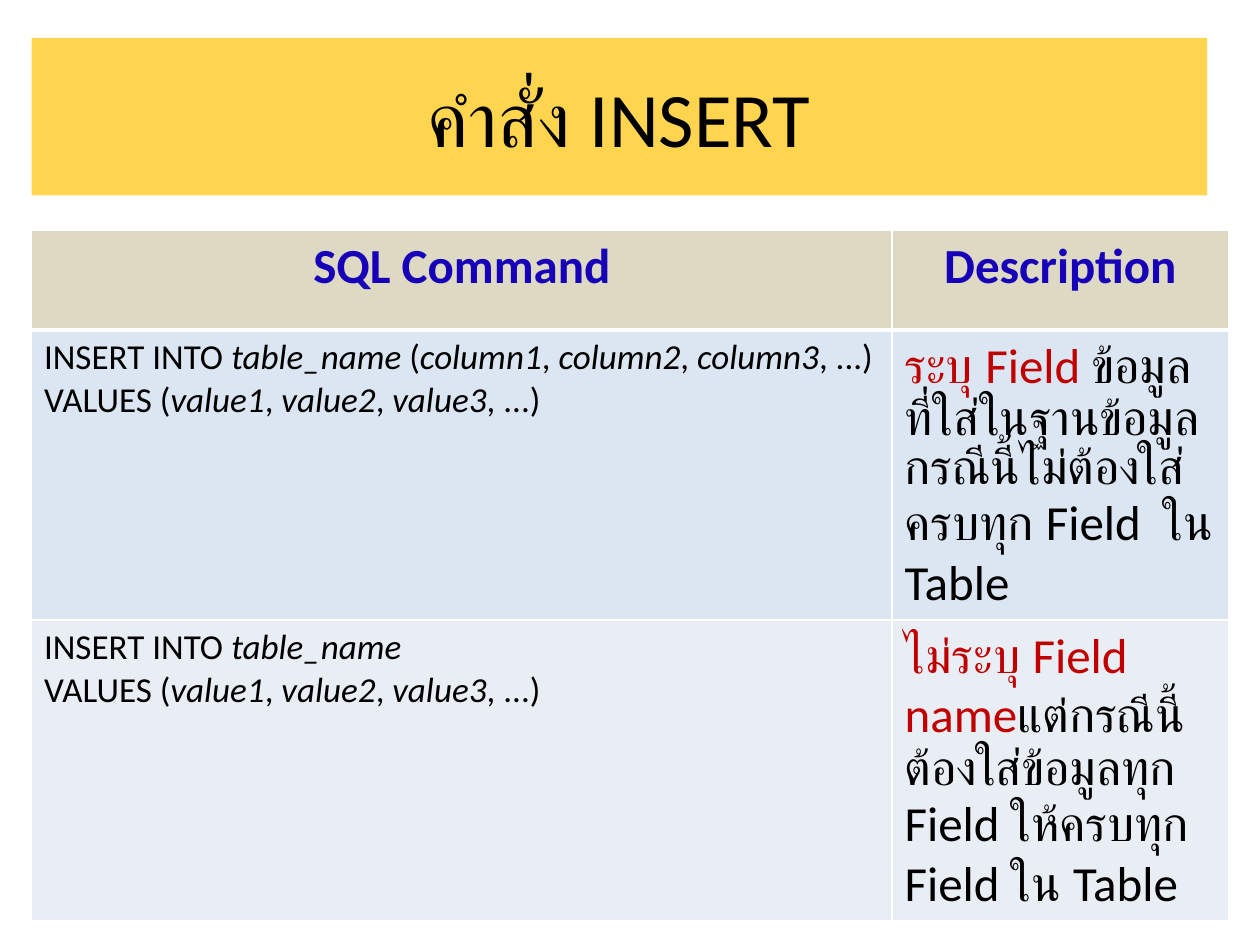
"""Build a slide that explains the two forms of the SQL INSERT command."""
from lxml import etree
from pptx import Presentation, util as u
from pptx.dml.color import RGBColor
from pptx.enum import text
from pptx.oxml import ns

GOLD = RGBColor(0xFF, 0xD5, 0x4F)
SAND = RGBColor(0xDD, 0xD9, 0xC3)
SKY = RGBColor(0xDC, 0xE6, 0xF2)
MIST = RGBColor(0xE9, 0xED, 0xF4)
BLUE = RGBColor(0x16, 0x00, 0xB8)
RED = RGBColor(0xC0, 0x00, 0x00)
BLACK = RGBColor(0, 0, 0)
WHITE = RGBColor(0xFF, 0xFF, 0xFF)

TITLE = "คำสั่ง INSERT"
HEAD = ("SQL Command", "Description")
ROWS = [
    ("INSERT INTO *table_name* (*column1*,* column2*,* column3*, ...)\n"
     "VALUES (*value1*,* value2*,* value3*, ...)",
     "*ระบุ Field *ข้อมูลที่ใส่ในฐานข้อมูล¶กรณีนี้ไม่ต้องใส่ครบทุก Field  ใน Table"),
    ("INSERT INTO *table_name*\nVALUES (*value1*,* value2*,* value3*, ...)",
     "*ไม่ระบุ Field name*แต่กรณีนี้ต้องใส่ข้อมูลทุก Field ให้ครบทุก Field ใน Table"),
]
FILLS = (SAND, SKY, MIST)
WIDTHS = (6.83, 2.67)
HEIGHTS = (0.79, 2.09, 1.59)
LEFT, TOP = 0.25, 1.83

BASE = {"name": "Calibri", "bold": False, "italic": False}
TOPIC = {**BASE, "size": u.Pt(44), "color": BLACK}
LABEL = {**BASE, "size": u.Pt(28), "color": BLUE, "bold": True}
CODE = {**BASE, "size": u.Pt(20), "color": BLACK}
NOTE = {**BASE, "size": u.Pt(28), "color": BLACK}
STYLES = ((CODE, {**CODE, "italic": True}), (NOTE, {**NOTE, "color": RED}))


def add_run(para, words, style):
    run = para.add_run()
    run.text = words
    for key, value in style.items():
        if key == "color":
            run.font.color.rgb = value
        else:
            setattr(run.font, key, value)


def write(frame, words, plain, marked=None, align=text.PP_ALIGN.LEFT):
    for p, line in enumerate(words.split("¶")):
        para = frame.add_paragraph() if p else frame.paragraphs[0]
        para.alignment = align
        for s, part in enumerate(line.split("*")):
            for b, piece in enumerate(part.split("\n")):
                if b:
                    para.add_line_break()
                if piece:
                    add_run(para, piece, marked if s % 2 else plain)


def add_edge(cell, side, points):
    props = cell._tc.get_or_add_tcPr()
    edge = etree.SubElement(props, ns.qn("a:ln" + side), w=str(u.Pt(points)))
    fill = etree.SubElement(edge, ns.qn("a:solidFill"))
    etree.SubElement(fill, ns.qn("a:srgbClr"), val=str(WHITE))


def add_title(slide):
    title = slide.shapes.title
    place = {"left": LEFT, "top": 0.3, "width": 9.33, "height": 1.25}
    for key, value in place.items():
        setattr(title, key, u.Inches(value))
    title.fill.solid()
    title.fill.fore_color.rgb = GOLD
    title.text_frame.vertical_anchor = text.MSO_ANCHOR.MIDDLE
    write(title.text_frame, TITLE, TOPIC, align=text.PP_ALIGN.CENTER)


def add_grid(slide):
    box = [u.Inches(n) for n in (LEFT, TOP, sum(WIDTHS), sum(HEIGHTS))]
    grid = slide.shapes.add_table(len(HEIGHTS), len(WIDTHS), *box).table
    for col, width in zip(grid.columns, WIDTHS):
        col.width = u.Inches(width)
    for row, height in zip(grid.rows, HEIGHTS):
        row.height = u.Inches(height)
    for r, words in enumerate([HEAD, *ROWS]):
        for c, word in enumerate(words):
            cell = grid.cell(r, c)
            for side in "LRTB":
                thick = (r, side) in ((0, "B"), (1, "T"))
                add_edge(cell, side, 3 if thick else 1)
            cell.fill.solid()
            cell.fill.fore_color.rgb = FILLS[r]
            if r:
                write(cell.text_frame, word, *STYLES[c])
            else:
                write(cell.text_frame, word, LABEL, align=text.PP_ALIGN.CENTER)


def main():
    deck = Presentation()
    deck.slide_width, deck.slide_height = u.Inches(10), u.Inches(7.5)
    slide = deck.slides.add_slide(deck.slide_layouts[5])
    add_title(slide)
    add_grid(slide)
    deck.save("out.pptx")


if __name__ == "__main__":
    main()
